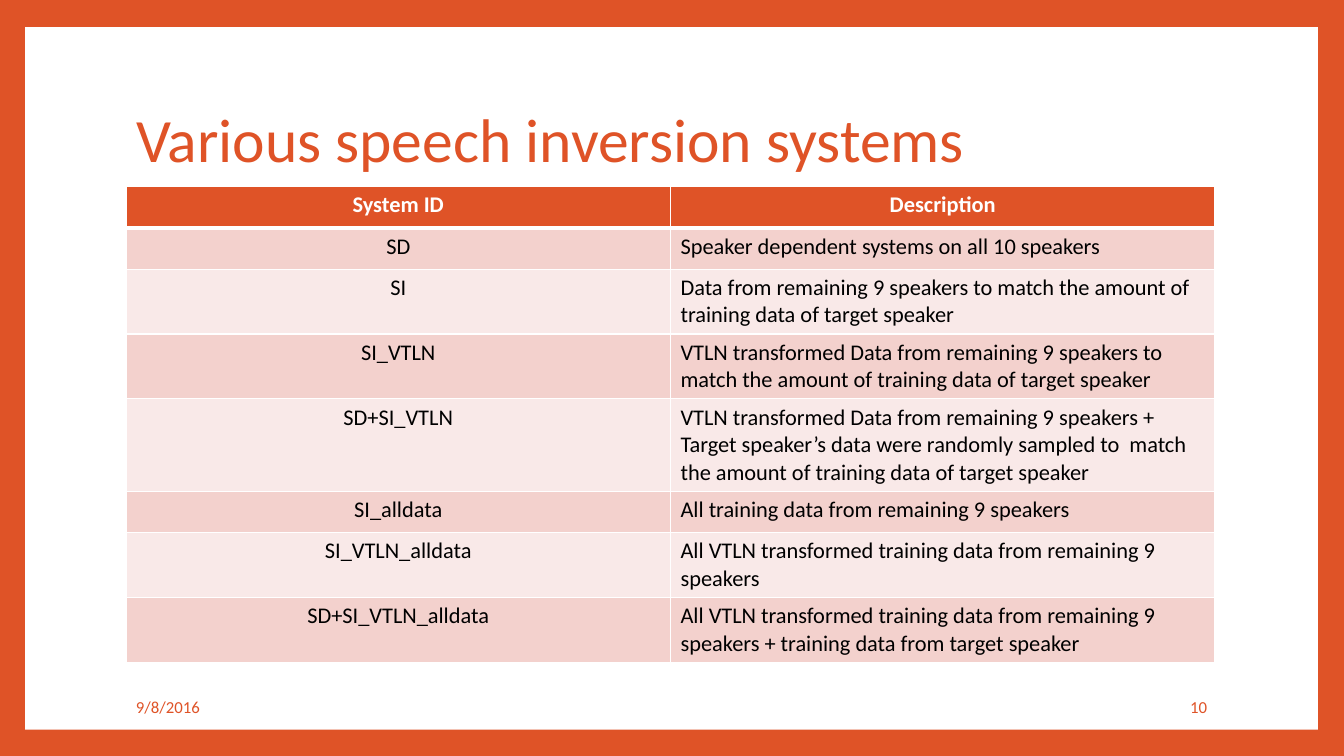
from lxml import etree
from pptx import Presentation
from pptx import util as u
from pptx.dml import color
from pptx.enum import shapes, text
from pptx.oxml import ns

ACCENT, WHITE, BLACK = "DF5327", "FFFFFF", "000000"
BANDS = ["F3D1CD", "F9E9E8"]
LEFT, WIDTH = 1.25, 10.8
ROW_HEIGHTS = {1: 0.41, 2: 0.64, 3: 0.91}
HEADINGS = ("System ID", "Description")
SYSTEMS = [
    ("SD", "Speaker dependent systems on all 10 speakers", 1),
    ("SI", "Data from remaining 9 speakers to match the amount of training data of target speaker", 2),
    ("SI_VTLN", "VTLN transformed Data from remaining 9 speakers to match the amount of "
     "training data of target speaker", 2),
    ("SD+SI_VTLN", "VTLN transformed Data from remaining 9 speakers + Target speaker’s data were "
     "randomly sampled to  match the amount of training data of target speaker", 3),
    ("SI_alldata", "All training data from remaining 9 speakers", 1),
    ("SI_VTLN_alldata", "All VTLN transformed training data from remaining 9 speakers", 2),
    ("SD+SI_VTLN_alldata", "All VTLN transformed training data from remaining 9 speakers + "
     "training data from target speaker", 2),
]


def paint(target, value):
    """Give a fill a solid colour from a hex string."""
    target.solid()
    target.fore_color.rgb = color.RGBColor.from_string(value)


def write(frame, words, size=16, colour=BLACK, bold=False, align=text.PP_ALIGN.LEFT, spacing=1.0):
    """Write one formatted paragraph into a text frame."""
    frame.word_wrap = True
    paragraph = frame.paragraphs[0]
    paragraph.alignment, paragraph.line_spacing = align, spacing
    run = paragraph.add_run()
    run.text = words
    run.font.name, run.font.size, run.font.bold = "Calibri", u.Pt(size), bold
    paint(run.font.fill, colour)


def add_background(slide, left, top, width, height):
    """Colour the slide and lay the white panel behind everything."""
    paint(slide.background.fill, ACCENT)
    panel = slide.shapes.add_shape(shapes.MSO_SHAPE.RECTANGLE, *map(u.Inches, (left, top, width, height)))
    panel.shadow.inherit = False
    paint(panel.fill, WHITE)
    panel.line.fill.background()
    slide.shapes._spTree.insert(2, panel._element)


def add_title(slide, words, left, top, width, height):
    """Place and format the title placeholder."""
    title = slide.shapes.title
    title.left, title.top, title.width, title.height = map(u.Inches, (left, top, width, height))
    title.text_frame.vertical_anchor = text.MSO_ANCHOR.MIDDLE
    write(title.text_frame, words, size=44, colour=ACCENT, spacing=0.9)


def add_borders(cell, bottom):
    """Draw white borders round a cell, with the bottom width in points."""
    properties = cell._tc.get_or_add_tcPr()
    for position, (side, points) in enumerate({"lnL": 1, "lnR": 1, "lnT": 1, "lnB": bottom}.items()):
        line = etree.Element(ns.qn(f"a:{side}"), w=str(u.Pt(points)))
        fill = etree.SubElement(line, ns.qn("a:solidFill"))
        etree.SubElement(fill, ns.qn("a:srgbClr"), val=WHITE)
        properties.insert(position, line)


def fill_row(table, index, words, fill, bottom=1, **formats):
    """Fill one table row; the first column is always centred."""
    for column, content in enumerate(words):
        cell = table.cell(index, column)
        paint(cell.fill, fill)
        add_borders(cell, bottom)
        centred = column == 0 or index == 0
        align = text.PP_ALIGN.CENTER if centred else text.PP_ALIGN.LEFT
        write(cell.text_frame, content, align=align, **formats)


def add_systems_table(slide, left, top, width):
    """Build the table of systems with banded rows."""
    line_counts = [1] + [lines for *_, lines in SYSTEMS]
    heights = [ROW_HEIGHTS[lines] for lines in line_counts]
    box = map(u.Inches, (left, top, width, sum(heights)))
    table = slide.shapes.add_table(len(heights), len(HEADINGS), *box).table
    for row, height in zip(table.rows, heights):
        row.height = u.Inches(height)
    fill_row(table, 0, HEADINGS, ACCENT, bottom=3, colour=WHITE, bold=True)
    for index, (name, description, _) in enumerate(SYSTEMS):
        fill_row(table, index + 1, (name, description), BANDS[index % 2])


def add_footer(slide, words, left, top, width, height, align):
    """Add one small footer text."""
    box = slide.shapes.add_textbox(*map(u.Inches, (left, top, width, height)))
    box.text_frame.vertical_anchor = text.MSO_ANCHOR.MIDDLE
    write(box.text_frame, words, size=12, colour=ACCENT, align=align)


def main():
    """Build and save the slide."""
    presentation = Presentation()
    presentation.slide_width, presentation.slide_height = u.Inches(13.33), u.Inches(7.5)
    slide = presentation.slides.add_slide(presentation.slide_layouts.get_by_name("Title Only"))
    add_background(slide, 0.25, 0.27, 12.82, 6.97)
    add_title(slide, "Various speech inversion systems", LEFT, 0.67, WIDTH, 1.48)
    add_systems_table(slide, LEFT, 1.85, WIDTH)
    add_footer(slide, "9/8/2016", LEFT, 6.81, 2.55, 0.4, text.PP_ALIGN.LEFT)
    add_footer(slide, "10", 10.2, 6.81, 1.87, 0.4, text.PP_ALIGN.RIGHT)
    presentation.save("out.pptx")


if __name__ == "__main__":
    main()
